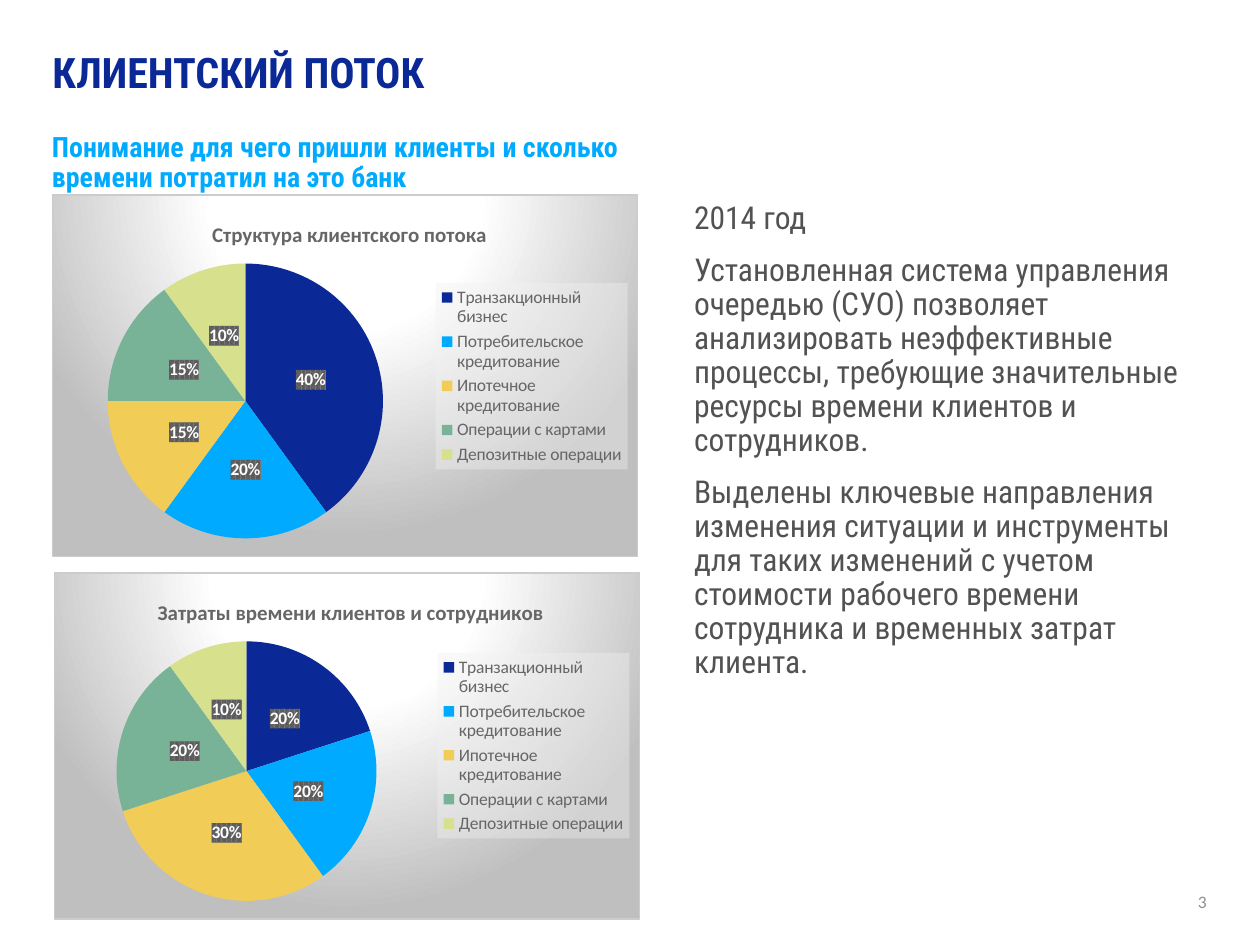
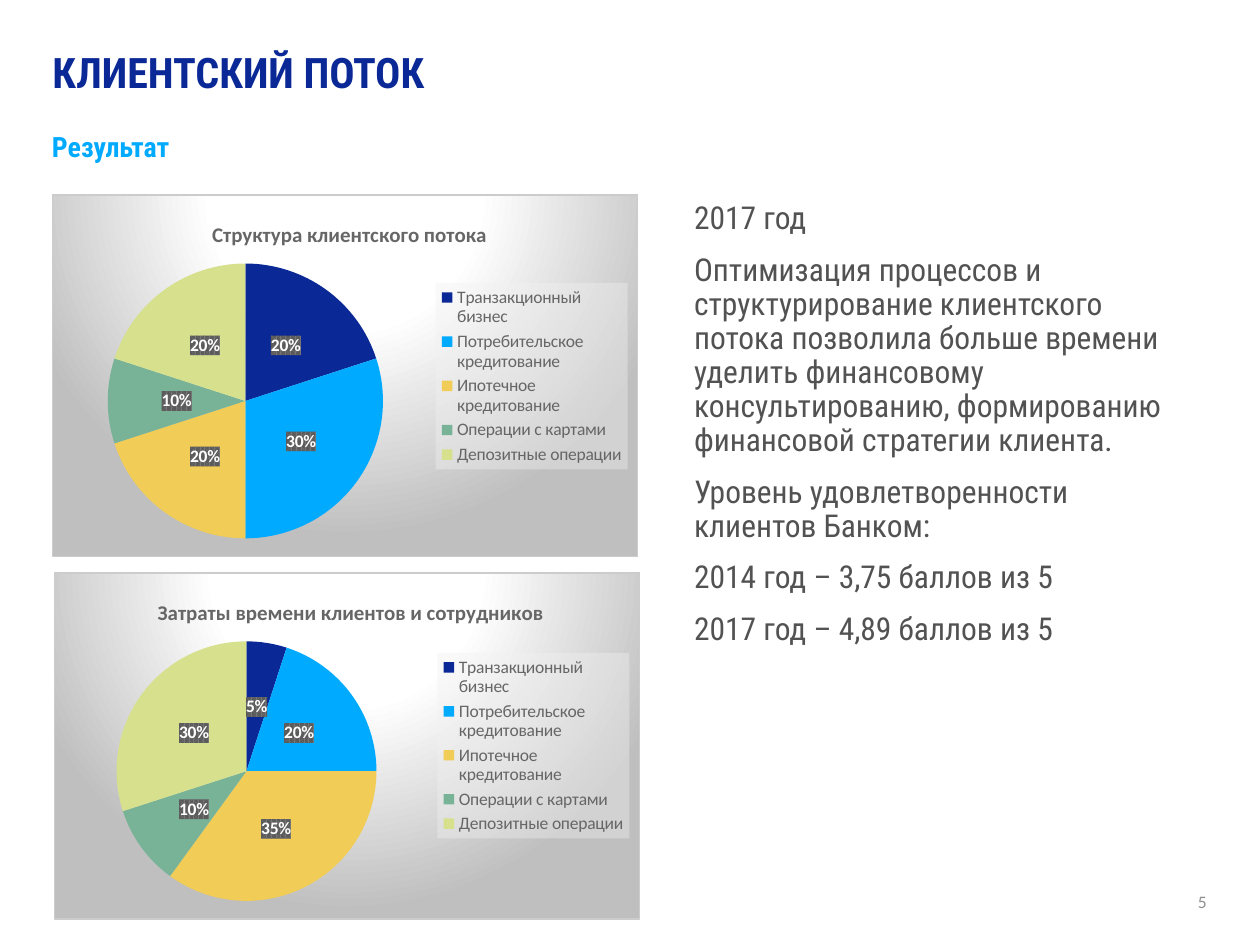
from dataclasses import dataclass

import pptx
import pptx.chart.chart
import pptx.chart.data
import pptx.dml.color
import pptx.enum.chart
import pptx.enum.text
import pptx.oxml
import pptx.oxml.ns
import pptx.slide
import pptx.util

Pt = pptx.util.Pt
COLORS = {
    "navy": "0A2896", "sky": "00AAFF", "yellow": "F1CC56", "green": "78B397",
    "lime": "D6E08D", "white": "FFFFFF", "body": "525252", "chart_text": "666666",
    "number": "909090", "border": "CCCCCC", "shade": "BFBFBF", "legend": "F2F2F2",
    "label_front": "757575", "label_back": "5A5A5A",
}
TEXT_FONT, CHART_FONT = "Roboto Condensed", "Calibri"
TITLE = "КЛИЕНТСКИЙ ПОТОК"
# Bank services: name and slice colour
SERVICES = {
    "Транзакционный бизнес": "navy",
    "Потребительское кредитование": "sky",
    "Ипотечное кредитование": "yellow",
    "Операции с картами": "green",
    "Депозитные операции": "lime",
}


@dataclass(frozen=True)
class Box:
    left: float
    top: float
    width: float
    height: float

    def lengths(self) -> tuple[pptx.util.Length, ...]:
        return Pt(self.left), Pt(self.top), Pt(self.width), Pt(self.height)


@dataclass(frozen=True)
class TextStyle:
    size: float
    color: str
    font: str = TEXT_FONT
    bold: bool = False
    line_spacing: float = 0.9
    align: pptx.enum.text.PP_ALIGN = pptx.enum.text.PP_ALIGN.LEFT


@dataclass(frozen=True)
class PiePanel:
    """A pie chart; its title, pie and legend are placed as shares of the panel."""
    heading: str
    box: Box
    heading_at: tuple[float, float]
    pie: Box
    legend: Box


@dataclass(frozen=True)
class FlowSlide:
    number: int
    subtitle: str
    flow_shares: tuple[int, ...]
    time_shares: tuple[int, ...]
    story: tuple[str, ...]


TITLE_BOX = Box(30, 30, 308, 26)
SUBTITLE_BOX = Box(29.7, 76.3, 330.5, 35)
STORY_BOX = Box(389.5, 112.3, 300, 343)
NUMBER_BOX = Box(659.5, 509, 30, 29)

TITLE_STYLE = TextStyle(24, "navy", bold=True)
SUBTITLE_STYLE = TextStyle(16, "sky", bold=True)
STORY_STYLE = TextStyle(18, "body")
NUMBER_STYLE = TextStyle(10, "number", CHART_FONT, line_spacing=1.0,
                         align=pptx.enum.text.PP_ALIGN.RIGHT)

FLOW_PANEL = PiePanel("Структура клиентского потока", Box(29.7, 111, 335, 207.4),
                      (0.266, 0.06), Box(0.094, 0.19, 0.471, 0.76),
                      Box(0.655, 0.243, 0.328, 0.516))
TIME_PANEL = PiePanel("Затраты времени клиентов и сотрудников", Box(30.7, 327, 335, 198.5),
                      (0.17, 0.063), Box(0.106, 0.198, 0.445, 0.75),
                      Box(0.655, 0.231, 0.328, 0.536))

SLIDES = (
    FlowSlide(
        3, "Понимание для чего пришли клиенты и сколько времени потратил на это банк",
        (40, 20, 15, 15, 10), (20, 20, 30, 20, 10),
        ("2014 год",
         "Установленная система управления очередью (СУО) позволяет анализировать "
         "неэффективные процессы, требующие значительные ресурсы времени клиентов "
         "и сотрудников.",
         "Выделены ключевые направления изменения ситуации и инструменты для таких "
         "изменений с учетом стоимости рабочего времени сотрудника и временных "
         "затрат клиента."),
    ),
    FlowSlide(
        5, "Результат", (20, 30, 20, 10, 20), (5, 20, 35, 10, 30),
        ("2017 год",
         "Оптимизация процессов и структурирование клиентского потока позволила "
         "больше времени уделить финансовому консультированию, формированию "
         "финансовой стратегии клиента.",
         "Уровень удовлетворенности клиентов Банком:",
         "2014 год – 3,75 баллов из 5",
         "2017 год – 4,89 баллов из 5"),
    ),
)


def rgb(color: str) -> pptx.dml.color.RGBColor:
    return pptx.dml.color.RGBColor.from_string(COLORS[color])


def set_font(font, size: float, color: str, name: str, bold: bool = False) -> None:
    font.size, font.name, font.bold = Pt(size), name, bold
    font.color.rgb = rgb(color)


def add_text(slide: pptx.slide.Slide, box: Box, texts: tuple[str, ...],
             style: TextStyle, inset: tuple[float, float] = (0, 0)) -> None:
    frame = slide.shapes.add_textbox(*box.lengths()).text_frame
    frame.word_wrap = True
    frame.margin_left = frame.margin_right = Pt(inset[0])
    frame.margin_top = frame.margin_bottom = Pt(inset[1])
    frame.text = "\n".join(texts)
    for index, paragraph in enumerate(frame.paragraphs):
        paragraph.alignment = style.align
        paragraph.line_spacing = style.line_spacing
        paragraph.space_before = Pt(10 if index else 0)
        for run in paragraph.runs:
            set_font(run.font, style.size, style.color, style.font, style.bold)


# Chart XML that has no public method
def shape_properties(content: str):
    return pptx.oxml.parse_xml(
        f'<c:spPr {pptx.oxml.ns.nsdecls("c", "a")}>{content}</c:spPr>')


def solid(color: str, inner: str = "") -> str:
    return f'<a:srgbClr val="{COLORS[color]}">{inner}</a:srgbClr>'


def panel_properties():
    stops = "".join(f'<a:gs pos="{position * 1000}">{solid(color)}</a:gs>' for position, color
                    in ((0, "white"), (39, "white"), (100, "shade")))
    return shape_properties(
        f'<a:gradFill><a:gsLst>{stops}</a:gsLst><a:path path="circle">'
        '<a:fillToRect l="50000" t="-80000" r="50000" b="180000"/></a:path></a:gradFill>'
        f'<a:ln w="9525"><a:solidFill>{solid("border")}</a:solidFill></a:ln>')


def label_properties():
    return shape_properties(
        f'<a:pattFill prst="pct75"><a:fgClr>{solid("label_front")}</a:fgClr>'
        f'<a:bgClr>{solid("label_back")}</a:bgClr></a:pattFill><a:ln><a:noFill/></a:ln>')


def legend_properties():
    fill = solid("legend", '<a:alpha val="39000"/>')
    return shape_properties(f'<a:solidFill>{fill}</a:solidFill><a:ln><a:noFill/></a:ln>')


def place(part, index: int, shares: dict[str, float], target: str = "") -> None:
    """Give a chart part a manual layout, in shares of the chart."""
    for old in part.xpath("c:layout"):
        part.remove(old)
    modes = "".join(f'<c:{axis}Mode val="edge"/>' for axis in "xy")
    values = "".join(f'<c:{key} val="{value}"/>' for key, value in shares.items())
    part.insert(index, pptx.oxml.parse_xml(
        f'<c:layout {pptx.oxml.ns.nsdecls("c")}><c:manualLayout>{target}{modes}{values}'
        '</c:manualLayout></c:layout>'))


def box_shares(box: Box) -> dict[str, float]:
    return {"x": box.left, "y": box.top, "w": box.width, "h": box.height}


def add_pie(slide: pptx.slide.Slide, panel: PiePanel, shares: tuple[int, ...]) -> None:
    data = pptx.chart.data.CategoryChartData()
    data.categories = list(SERVICES)
    data.add_series("Series 1", shares)
    chart = slide.shapes.add_chart(
        pptx.enum.chart.XL_CHART_TYPE.PIE, *panel.box.lengths(), data).chart
    set_font(chart.font, 10, "chart_text", CHART_FONT)

    # Heading
    chart.has_title = True
    heading = chart.chart_title.text_frame
    heading.text = panel.heading
    set_font(heading.paragraphs[0].runs[0].font, 12, "chart_text", CHART_FONT, True)

    # Slices and their percentages
    plot = chart.plots[0]
    plot.vary_by_categories = True
    for index, color in enumerate(SERVICES.values()):
        slice_fill = plot.series[0].points[index].format.fill
        slice_fill.solid()
        slice_fill.fore_color.rgb = rgb(color)
    plot.has_data_labels = True
    percents = plot.data_labels
    percents.show_percentage, percents.show_value = True, False
    percents.number_format, percents.number_format_is_linked = "0%", False
    percents.position = pptx.enum.chart.XL_LABEL_POSITION.CENTER
    set_font(percents.font, 10, "white", CHART_FONT, True)

    # Legend
    chart.has_legend = True
    chart.legend.position = pptx.enum.chart.XL_LEGEND_POSITION.RIGHT
    chart.legend.include_in_layout = False
    set_font(chart.legend.font, 10, "chart_text", CHART_FONT)

    # Fills and placement
    root = chart.element
    root.xpath("c:chart")[0].addnext(panel_properties())
    root.xpath(".//c:dLbls/c:txPr")[0].addprevious(label_properties())
    root.xpath(".//c:legend/c:txPr")[0].addprevious(legend_properties())
    place(root.xpath("c:chart/c:title")[0], 1, dict(zip("xy", panel.heading_at)))
    place(root.xpath(".//c:legend")[0], 1, box_shares(panel.legend))
    place(root.xpath(".//c:plotArea")[0], 0, box_shares(panel.pie),
          '<c:layoutTarget val="inner"/>')


def add_flow_slide(deck, content: FlowSlide) -> None:
    slide = deck.slides.add_slide(deck.slide_layouts[6])
    add_text(slide, TITLE_BOX, (TITLE,), TITLE_STYLE)
    add_text(slide, NUMBER_BOX, (str(content.number),), NUMBER_STYLE)
    add_text(slide, SUBTITLE_BOX, (content.subtitle,), SUBTITLE_STYLE)
    add_pie(slide, FLOW_PANEL, content.flow_shares)
    add_pie(slide, TIME_PANEL, content.time_shares)
    add_text(slide, STORY_BOX, content.story, STORY_STYLE, inset=(7.2, 3.6))


def main() -> None:
    deck = pptx.Presentation()
    deck.slide_width, deck.slide_height = Pt(720), Pt(540)
    for content in SLIDES:
        add_flow_slide(deck, content)
    deck.save("out.pptx")


if __name__ == "__main__":
    main()
